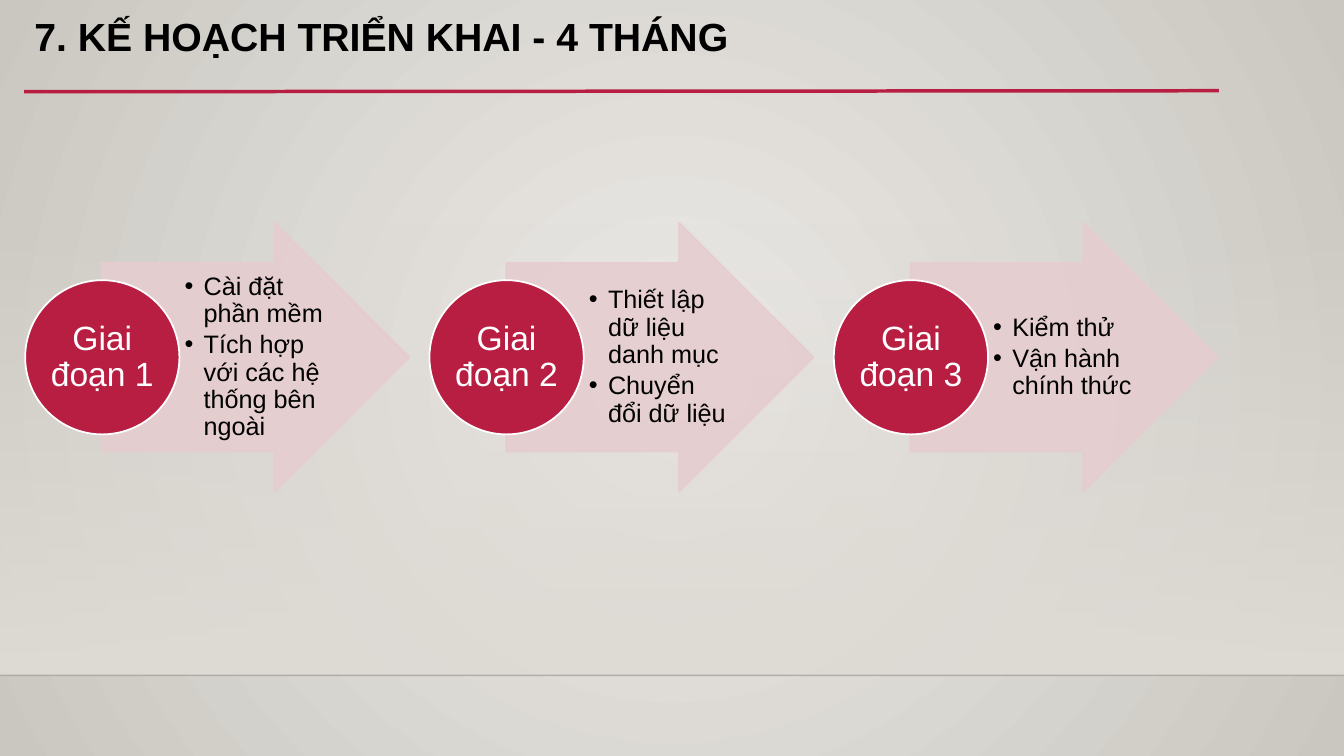
from lxml import etree
from pptx import Presentation
from pptx.dml.color import RGBColor
from pptx.enum.shapes import MSO_CONNECTOR, MSO_SHAPE
from pptx.enum.text import MSO_ANCHOR, PP_ALIGN
from pptx.oxml import parse_xml
from pptx.oxml.ns import nsdecls, qn
from pptx.util import Inches, Pt

RECTANGLE, ARROW, CIRCLE = MSO_SHAPE.RECTANGLE, MSO_SHAPE.RIGHT_ARROW, MSO_SHAPE.OVAL
STRAIGHT = MSO_CONNECTOR.STRAIGHT
TOP, MIDDLE = MSO_ANCHOR.TOP, MSO_ANCHOR.MIDDLE
LEFT, CENTER = PP_ALIGN.LEFT, PP_ALIGN.CENTER

WIDTH, HEIGHT = 13.33, 7.5
FLOOR_TOP, FLOOR_EDGE = 2.21, 6.7
RED, PINK, WHITE, BLACK = "B71E42", "E6CDCF", "FFFFFF", "000000"

PHASES = [
    ("Giai đoạn 1", ["Cài đặt phần mềm", "Tích hợp với các hệ thống bên ngoài"]),
    ("Giai đoạn 2", ["Thiết lập dữ liệu danh mục", "Chuyển đổi dữ liệu"]),
    ("Giai đoạn 3", ["Kiểm thử", "Vận hành chính thức"]),
]
PHASE_LEFT, PHASE_TOP, PHASE_STEP = 0.25, 2.21, 4.01


def color(value):
    return RGBColor.from_string(value)


def apply_format(target, values):
    for name, value in values.items():
        setattr(target, name, value)


def gradient(stops, direction):
    """Build a gradient fill from (position, colour, opacity) stops in percent."""
    marks = "".join(
        f'<a:gs pos="{position * 1000}"><a:srgbClr val="{value}">'
        f'<a:alpha val="{opacity * 1000}"/></a:srgbClr></a:gs>'
        for position, value, opacity in stops)
    return parse_xml(f'<a:gradFill {nsdecls("a")} rotWithShape="1">'
                     f'<a:gsLst>{marks}</a:gsLst>{direction}</a:gradFill>')


def replace_fill(parent, fill):
    parent.replace(parent.find(qn("a:solidFill")), fill)


def set_opacity(fill_parent, percent):
    tone = fill_parent.find(qn("a:solidFill"))[0]
    etree.SubElement(tone, qn("a:alpha")).set("val", str(percent * 1000))


def add_shape(page, kind, box, fill, line=None):
    shape = page.shapes.add_shape(kind, *map(Inches, box))
    shape.shadow.inherit = False
    shape.fill.solid()
    shape.fill.fore_color.rgb = color(fill)
    if line:
        shape.line.color.rgb = color(line)
        shape.line.width = Pt(1.25)
    else:
        shape.line.fill.background()
    return shape


def add_line(page, start, end, tone, width):
    line = page.shapes.add_connector(STRAIGHT, *map(Inches, start + end))
    line.line.color.rgb = color(tone)
    line.line.width = Pt(width)
    etree.SubElement(line._element.spPr, qn("a:effectLst"))
    return line


def write(frame, lines, size, tone, insets, anchor=MIDDLE, align=LEFT,
          bold=False, bullets=False):
    sides = ("margin_left", "margin_top", "margin_right", "margin_bottom")
    apply_format(frame, dict(zip(sides, map(Inches, insets)),
                             word_wrap=True, vertical_anchor=anchor))
    for index, line in enumerate(lines):
        para = frame.add_paragraph() if index else frame.paragraphs[0]
        apply_format(para, {"alignment": align, "line_spacing": 0.9})
        if bullets:
            para.space_after = Pt(3)
            props = para._p.get_or_add_pPr()
            props.set("marL", str(Inches(0.19)))
            props.set("indent", str(Inches(-0.19)))
            etree.SubElement(props, qn("a:buFont")).set("typeface", "Arial")
            etree.SubElement(props, qn("a:buChar")).set("char", "•")
        span = para.add_run()
        span.text = line
        apply_format(span.font, {"name": "Arial", "size": Pt(size), "bold": bold})
        span.font.color.rgb = color(tone)


def add_backdrop(page):
    # Radial glow behind everything
    page.background.fill.solid()
    glow = gradient(
        [(0, "ECEAE7", 100), (100, "CAC7C1", 100)],
        '<a:path path="circle"><a:fillToRect l="50000" t="50000" r="50000" b="50000"/></a:path>')
    replace_fill(page._element.xpath(".//p:bgPr")[0], glow)

    # Fading wall and its floor edge
    wall = add_shape(page, RECTANGLE,
                     (0, FLOOR_TOP, WIDTH, FLOOR_EDGE - FLOOR_TOP), "DFDBD5")
    fade = gradient([(0, "DFDBD5", 0), (100, "DFDBD5", 100)],
                    '<a:lin ang="5400000" scaled="0"/>')
    replace_fill(wall._element.spPr, fade)
    edge = add_line(page, (0, FLOOR_EDGE), (WIDTH, FLOOR_EDGE), "000001", 1)
    set_opacity(edge.line._get_or_add_ln(), 20)


def add_heading(page, text, left, top, width, height):
    add_line(page, (left, top + 0.79), (left + width, top + 0.78), RED, 2.5)
    title = page.shapes.title
    apply_format(title, dict(zip(("left", "top", "width", "height"),
                                 map(Inches, (left, top, width, height)))))
    write(title.text_frame, [text], 28, BLACK, (0.1, 0.05, 0.1, 0.05),
          anchor=TOP, bold=True)


def add_phase(page, name, tasks, left, top):
    # Arrow with its task list
    arrow = add_shape(page, ARROW, (left + 0.76, top, 3.05, 2.67), PINK, PINK)
    arrow.adjustments[0], arrow.adjustments[1] = 0.7, 0.5
    set_opacity(arrow._element.spPr, 90)
    set_opacity(arrow.line._get_or_add_ln(), 90)
    box = page.shapes.add_textbox(*map(Inches, (left + 1.53, top + 0.4, 1.49, 1.87)))
    write(box.text_frame, tasks, 18, BLACK, (0.05, 0.01, 0.03, 0.01), bullets=True)

    # Circle with the phase name
    circle = add_shape(page, CIRCLE, (left, top + 0.57, 1.53, 1.53), RED, WHITE)
    write(circle.text_frame, [name], 24, WHITE, (0.02,) * 4, align=CENTER)


def main():
    deck = Presentation()
    deck.slide_width, deck.slide_height = Inches(WIDTH), Inches(HEIGHT)
    page = deck.slides.add_slide(deck.slide_layouts[5])
    add_backdrop(page)
    add_heading(page, "7. KẾ HOẠCH TRIỂN KHAI - 4 THÁNG", 0.24, 0.12, 11.85, 0.57)
    for index, (name, tasks) in enumerate(PHASES):
        add_phase(page, name, tasks, PHASE_LEFT + index * PHASE_STEP, PHASE_TOP)
    deck.save("out.pptx")


if __name__ == "__main__":
    main()
